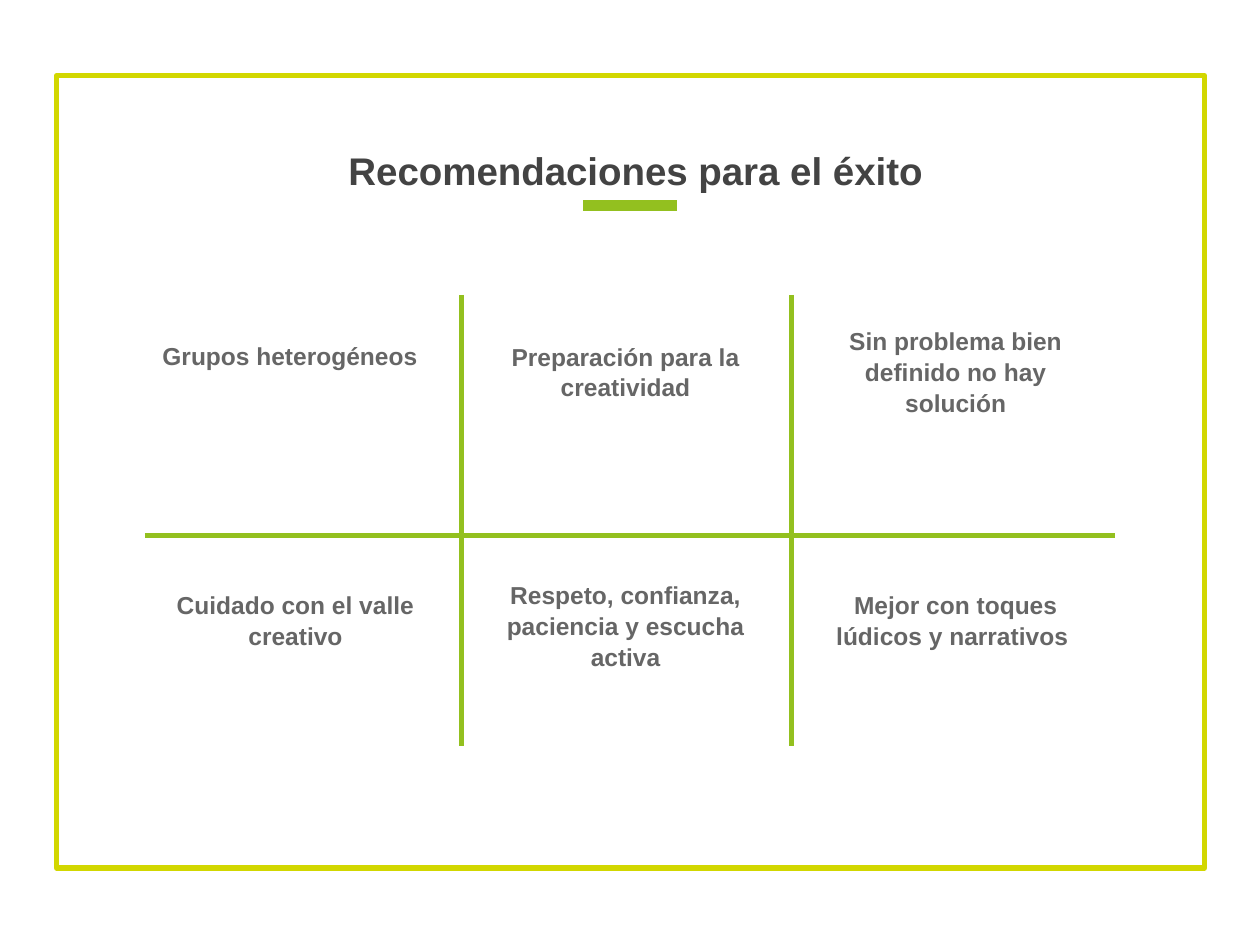
from pptx import Presentation
from pptx.dml.color import RGBColor
from pptx.enum.shapes import MSO_CONNECTOR, MSO_SHAPE
from pptx.enum.text import MSO_ANCHOR, PP_ALIGN
from pptx.oxml.ns import qn
from pptx.util import Inches, Pt
from lxml.etree import SubElement

LIME = RGBColor(0xD2, 0xD7, 0x00)
GREEN = RGBColor(0x93, 0xC0, 0x1F)
DARK = RGBColor(0x43, 0x43, 0x43)
GRAY = RGBColor(0x66, 0x66, 0x66)

deck = Presentation()
deck.slide_width = Inches(10)
deck.slide_height = Inches(7.5)
slide = deck.slides.add_slide(deck.slide_layouts[6])


def add_text(text, left, top, width=2.31, height=0.7, size=14, color=GRAY,
             align=PP_ALIGN.CENTER, space=1.05):
    box = slide.shapes.add_textbox(Inches(left), Inches(top), Inches(width), Inches(height))
    frame = box.text_frame
    frame.word_wrap = True
    frame.vertical_anchor = MSO_ANCHOR.BOTTOM
    frame.margin_left = frame.margin_right = Inches(0.1)
    frame.margin_top = frame.margin_bottom = Inches(0.1)
    para = frame.paragraphs[0]
    para.alignment = align
    para.line_spacing = space
    run = para.add_run()
    run.text = text
    run.font.name = "Arial"
    run.font.size = Pt(size)
    run.font.bold = True
    run.font.color.rgb = color


border = slide.shapes.add_shape(
    MSO_SHAPE.RECTANGLE, Inches(0.45), Inches(0.6), Inches(9.11), Inches(6.29))
border.shadow.inherit = False
border.fill.background()
border.line.color.rgb = LIME
border.line.width = Pt(3)

add_text("Recomendaciones para el éxito", 0.85, 0.93, width=8.39,
         size=22, color=DARK, space=1.0)

cols = [1.19 + 2.62 * i for i in range(3)]
add_text("Grupos heterogéneos", cols[0], 2.34, align=PP_ALIGN.LEFT)
add_text("Preparación para la creatividad", cols[1], 2.59)
add_text("Sin problema bien definido no hay solución", cols[2], 2.47, height=0.94)
add_text("Cuidado con el valle creativo", cols[0], 4.56)
add_text("Respeto, confianza, paciencia y escucha activa", cols[1], 4.39, height=1.04)
add_text("Mejor con toques lúdicos y narrativos ", cols[2], 4.56)

rules = [
    (3.66, 2.34, 3.66, 5.92, 3),
    (6.28, 2.34, 6.28, 5.92, 3),
    (4.63, 1.63, 5.37, 1.63, 6),
    (1.15, 4.25, 8.85, 4.25, 3),
]
for *ends, weight in rules:
    rule = slide.shapes.add_connector(MSO_CONNECTOR.STRAIGHT, *map(Inches, ends))
    rule.line.color.rgb = GREEN
    rule.line.width = Pt(weight)
    SubElement(rule._element.spPr, qn("a:effectLst"))

deck.save("out.pptx")
